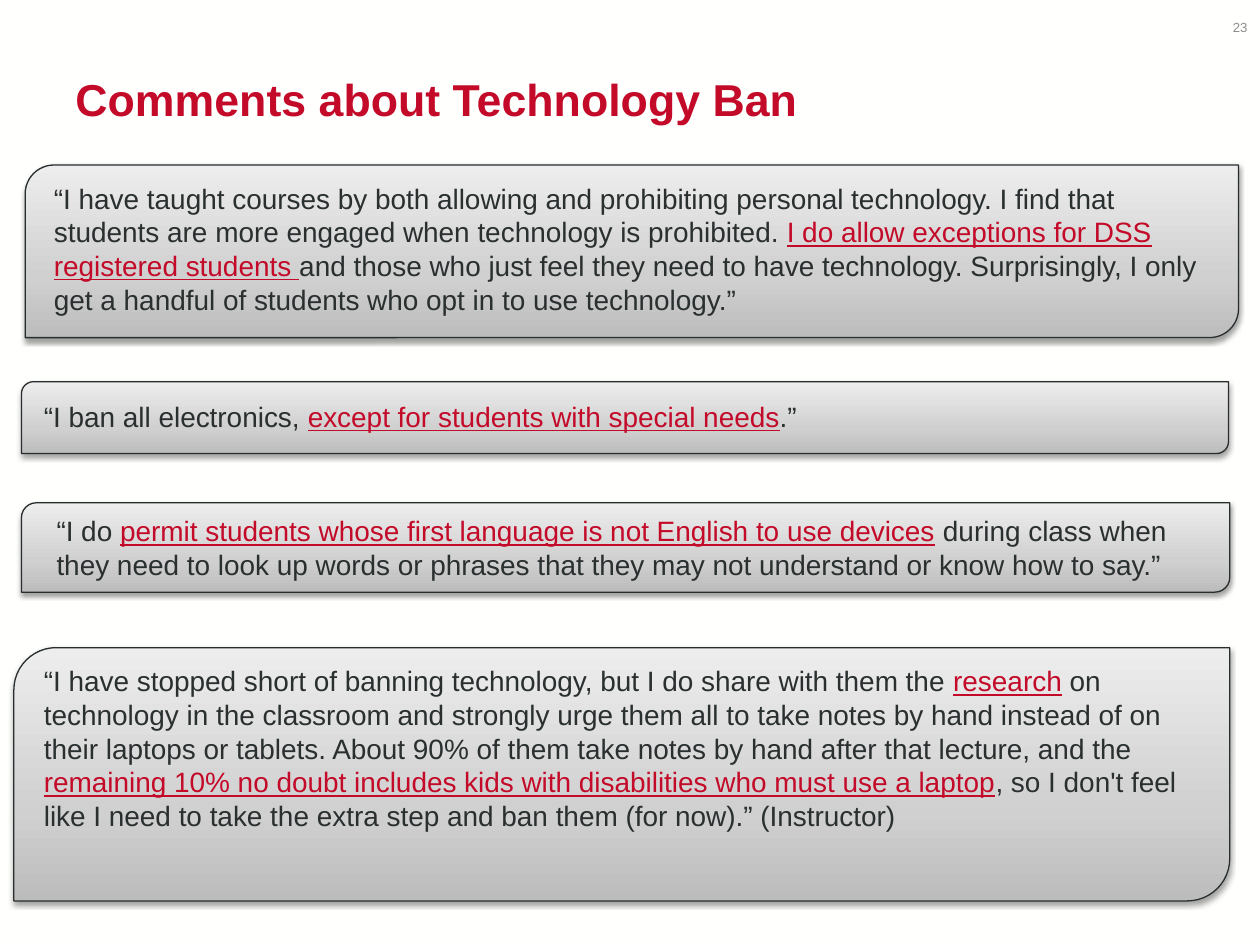
import pptx
import pptx.util
import pptx.dml.color
import pptx.enum.shapes
import pptx.enum.text
import pptx.oxml
import pptx.oxml.ns

Inches, Pt = pptx.util.Inches, pptx.util.Pt
RGBColor = pptx.dml.color.RGBColor
ANCHOR = pptx.enum.text.MSO_ANCHOR
ALIGN = pptx.enum.text.PP_ALIGN

PAPER = RGBColor(0xFF, 0xFF, 0xFE)
RED = RGBColor(0xC3, 0x0A, 0x29)
INK = RGBColor(0x2A, 0x2F, 0x30)
OUTLINE = RGBColor(0x28, 0x2D, 0x2E)
PAGE_GRAY = RGBColor(0x8B, 0x8C, 0x8C)
GRADIENT = [
    (0, RGBColor(0xBC, 0xBC, 0xBC)),
    (35, RGBColor(0xD0, 0xD0, 0xD0)),
    (100, RGBColor(0xED, 0xED, 0xED)),
]
NAMESPACE = pptx.oxml.ns.nsdecls("a")

TITLE = "Comments about Technology Ban"
PAGE_NUMBER = "23"

# panel and text areas: left, top, width, height in inches;
# every second piece of a comment is emphasized
COMMENTS = [
    ((0.2, 1.31, 9.63, 1.37), (0.33, 1.39, 9.47, 1.18), [
        "“I have taught courses by both allowing and prohibiting personal technology. "
        "I find that students are more engaged when technology is prohibited. ",
        "I do allow exceptions for DSS registered students ",
        "and those who just feel they need to have technology. Surprisingly, "
        "I only get a handful of students who opt in to use technology.”"]),
    ((0.17, 3.03, 9.58, 0.57), (0.25, 3.12, 8.7, 0.37), [
        "“I ban all electronics, ",
        "except for students with special needs",
        ".”"]),
    ((0.17, 3.99, 9.59, 0.71), (0.35, 4.03, 9.08, 0.64), [
        "“I do ",
        "permit students whose first language is not English to use devices",
        " during class when they need to look up words or phrases that they "
        "may not understand or know how to say.”"]),
    ((0.11, 5.14, 9.65, 2.01), (0.25, 5.22, 9.36, 1.72), [
        "“I have stopped short of banning technology, but I do share with them the ",
        "research",
        " on technology in the classroom and strongly urge them all to take notes "
        "by hand instead of on their laptops or tablets. About 90% of them take "
        "notes by hand after that lecture, and the ",
        "remaining 10% no doubt includes kids with disabilities who must use a laptop",
        ", so I don't feel like I need to take the extra step and ban them "
        "(for now).” (Instructor)"]),
]


def add_text(slide, area, pieces, size, color, anchor=ANCHOR.TOP, bold=False):
    """Add a text box whose odd pieces are red and underlined; return its paragraph."""
    text_frame = slide.shapes.add_textbox(*map(Inches, area)).text_frame
    text_frame.word_wrap = True
    text_frame.vertical_anchor = anchor
    paragraph = text_frame.paragraphs[0]
    for index, piece in enumerate(pieces):
        emphasized = index % 2 == 1
        run = paragraph.add_run()
        run.text = piece
        run.font.name = "Arial"
        run.font.size = Pt(size)
        run.font.bold = bold
        run.font.underline = emphasized
        run.font.color.rgb = RED if emphasized else color
    return paragraph


def add_panel(slide, area):
    """Add a gray gradient panel with two rounded corners and a soft shadow."""
    panel = slide.shapes.add_shape(
        pptx.enum.shapes.MSO_SHAPE.ROUND_2_DIAG_RECTANGLE, *map(Inches, area))
    panel.adjustments[0] = 0.167
    panel.adjustments[1] = 0
    panel.line.color.rgb = OUTLINE
    panel.line.width = Pt(0.75)

    panel.fill.gradient()
    panel.fill.gradient_angle = 90
    properties = panel.element.spPr
    stops = properties.find(".//" + pptx.oxml.ns.qn("a:gsLst"))
    for stop in list(stops):
        stops.remove(stop)
    for position, color in GRADIENT:
        stops.append(pptx.oxml.parse_xml(
            f'<a:gs {NAMESPACE} pos="{position * 1000}"><a:srgbClr val="{color}"/></a:gs>'))

    panel.shadow.inherit = False
    effects = properties.find(pptx.oxml.ns.qn("a:effectLst"))
    effects.append(pptx.oxml.parse_xml(
        f'<a:outerShdw {NAMESPACE} blurRad="{Pt(3.1)}" dist="{Pt(1.6)}" dir="5400000" '
        'rotWithShape="0"><a:srgbClr val="000000"><a:alpha val="37000"/></a:srgbClr>'
        '</a:outerShdw>'))


def main():
    presentation = pptx.Presentation()
    presentation.slide_width, presentation.slide_height = Inches(10), Inches(7.5)
    slide = presentation.slides.add_slide(presentation.slide_layouts[6])
    slide.background.fill.solid()
    slide.background.fill.fore_color.rgb = PAPER

    add_text(slide, (0.5, 0.16, 9, 1.25), [TITLE], 25.5, RED, ANCHOR.MIDDLE, bold=True)
    for panel_area, text_area, pieces in COMMENTS:
        add_panel(slide, panel_area)
        add_text(slide, text_area, pieces, 16, INK)
    page_number = add_text(
        slide, (7.67, 0.02, 2.33, 0.4), [PAGE_NUMBER], 7.5, PAGE_GRAY, ANCHOR.MIDDLE)
    page_number.alignment = ALIGN.RIGHT

    presentation.save("out.pptx")


if __name__ == "__main__":
    main()
